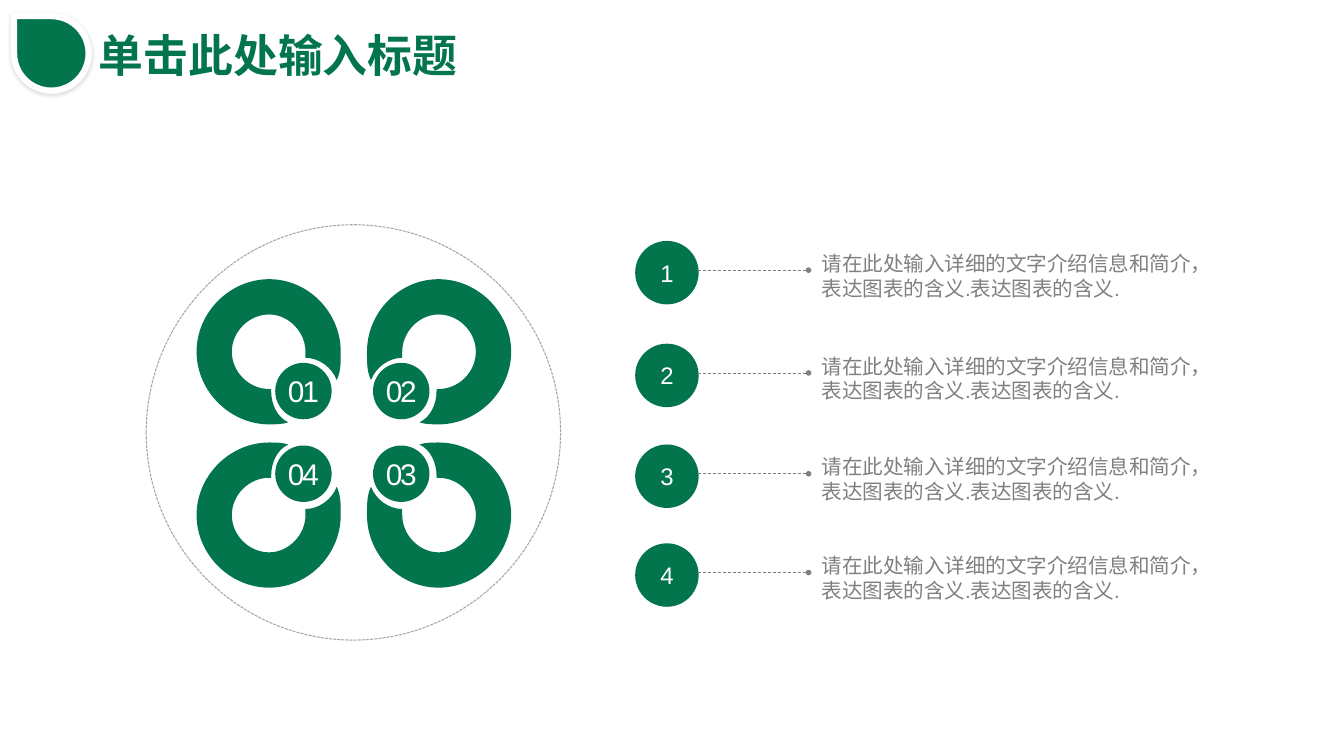
from dataclasses import dataclass

from lxml.etree import SubElement
from pptx import Presentation
from pptx.dml.color import RGBColor
from pptx.enum.dml import MSO_LINE
from pptx.enum.shapes import MSO_CONNECTOR, MSO_SHAPE
from pptx.enum.text import MSO_ANCHOR, PP_ALIGN
from pptx.oxml import parse_xml
from pptx.oxml.ns import nsdecls, qn
from pptx.util import Inches, Pt


@dataclass(frozen=True)
class Theme:
    font: str = "Arial"
    green: RGBColor = RGBColor(0x02, 0x75, 0x4D)
    gray: RGBColor = RGBColor(0x80, 0x80, 0x80)
    pale: RGBColor = RGBColor(0xA6, 0xA6, 0xA6)
    white: RGBColor = RGBColor(0xFF, 0xFF, 0xFF)
    title: float = 32
    badge: float = 21.3
    step: float = 17.1
    body: float = 14.65


theme = Theme()


def write(shape, text, size, color, align=PP_ALIGN.LEFT, bold=False):
    frame = shape.text_frame
    frame.text = text
    para = frame.paragraphs[0]
    para.alignment = align
    font = para.runs[0].font
    font.name, font.size, font.bold = theme.font, Pt(size), bold
    font.color.rgb = color
    return frame


def paint(shape, color):
    shape.shadow.inherit = False
    shape.fill.solid()
    shape.fill.fore_color.rgb = color
    shape.line.fill.background()


deck = Presentation()
deck.slide_width, deck.slide_height = Inches(13.33), Inches(7.5)
slide = deck.slides.add_slide(deck.slide_layouts[5])
shapes = slide.shapes

title = shapes.title
title.left, title.top = Inches(0.88), Inches(0.22)
title.width, title.height = Inches(3.79), Inches(0.64)
frame = write(title, "单击此处输入标题", theme.title, theme.green, bold=True)
frame.word_wrap = False
frame.vertical_anchor = MSO_ANCHOR.TOP

note = "请在此处输入详细的文字介绍信息和简介，表达图表的含义.表达图表的含义."
for step, top in enumerate((2.39, 3.41, 4.41, 5.39), 1):
    disc = shapes.add_shape(MSO_SHAPE.OVAL, Inches(6.3), Inches(top), Inches(0.63), Inches(0.63))
    paint(disc, theme.green)
    frame = write(disc, str(step), theme.step, theme.white, PP_ALIGN.CENTER)
    frame.vertical_anchor = MSO_ANCHOR.MIDDLE

    y = Inches(top + 0.29)
    link = shapes.add_connector(MSO_CONNECTOR.STRAIGHT, Inches(6.92), y, Inches(8.02), y)
    link.line.color.rgb = theme.gray
    link.line.width = Pt(0.5)
    link.line.dash_style = MSO_LINE.DASH
    SubElement(link.line._get_or_add_ln(), qn("a:tailEnd"), type="oval", w="sm", len="sm")
    SubElement(link._element.spPr, qn("a:effectLst"))

    box = shapes.add_textbox(Inches(8.05), Inches(top + 0.05), Inches(4.23), Inches(0.87))
    write(box, note, theme.body, theme.gray).word_wrap = True

orbit = shapes.add_shape(MSO_SHAPE.OVAL, Inches(1.45), Inches(2.23), Inches(4.11), Inches(4.12))
orbit.shadow.inherit = False
orbit.fill.background()
orbit.line.color.rgb = theme.pale
orbit.line.width = Pt(0.75)
orbit.line.dash_style = MSO_LINE.SQUARE_DOT

ring = (
    (2.67, 2.77),
    (3.06, 2.77), (3.38, 3.1), (3.38, 3.49),
    (3.38, 3.6), (3.38, 3.69), (3.34, 3.77),
    (3.29, 3.64), (3.16, 3.55), (3.03, 3.55),
    (3.03, 3.53), (3.03, 3.51), (3.03, 3.49),
    (3.03, 3.29), (2.86, 3.12), (2.67, 3.12),
    (2.47, 3.12), (2.3, 3.29), (2.3, 3.49),
    (2.3, 3.69), (2.47, 3.86), (2.67, 3.86),
    (2.69, 3.86), (2.69, 3.86), (2.69, 3.86),
    (2.69, 3.86), (2.69, 3.88), (2.69, 3.88),
    (2.69, 4.01), (2.75, 4.14), (2.86, 4.19),
    (2.8, 4.21), (2.73, 4.21), (2.67, 4.21),
    (2.28, 4.21), (1.95, 3.88), (1.95, 3.49),
    (1.95, 3.1), (2.28, 2.77), (2.67, 2.77),
)
middle = 3.51, 4.3
parts = (("01", 1, 1, 2.73, 3.6), ("02", -1, 1, 3.7, 3.6),
         ("03", -1, -1, 3.7, 4.42), ("04", 1, -1, 2.73, 4.42))
for label, across, down, left, top in parts:
    points = [(Inches(middle[0] + across * (x - middle[0])),
               Inches(middle[1] + down * (y - middle[1]))) for x, y in ring]
    pen = shapes.build_freeform(*points[0])
    pen.add_line_segments(points[1:], close=True)
    petal = pen.convert_to_shape()
    paint(petal, theme.green)
    lines = list(petal._element.iter(qn("a:lnTo")))
    for i in range(0, len(lines), 3):
        curve = SubElement(lines[i].getparent(), qn("a:cubicBezTo"))
        lines[i].addprevious(curve)
        for line in lines[i:i + 3]:
            curve.append(line[0])
            line.getparent().remove(line)

    badge = shapes.add_shape(MSO_SHAPE.OVAL, Inches(left), Inches(top), Inches(0.56), Inches(0.56))
    paint(badge, theme.green)
    frame = write(badge, label, theme.badge, theme.white, PP_ALIGN.CENTER)
    frame.vertical_anchor = MSO_ANCHOR.MIDDLE
    frame.word_wrap = False
    frame.margin_left = frame.margin_right = frame.margin_top = frame.margin_bottom = 0
    frame.paragraphs[0].runs[0].font._element.set("spc", "-150")

drop = shapes.add_shape(MSO_SHAPE.TEAR, Inches(0.14), Inches(0.16), Inches(0.74), Inches(0.74))
paint(drop, theme.green)
drop.line.color.rgb = theme.white
drop.line.width = Pt(4.5)
drop._element.spPr.xfrm.set("flipH", "1")
glow = drop._element.spPr.find(qn("a:effectLst"))
glow.append(parse_xml(
    f'<a:outerShdw {nsdecls("a")} blurRad="38100" dist="12700" dir="5400000" rotWithShape="0">'
    '<a:srgbClr val="000000"><a:alpha val="15000"/></a:srgbClr></a:outerShdw>'
))

deck.save("out.pptx")
